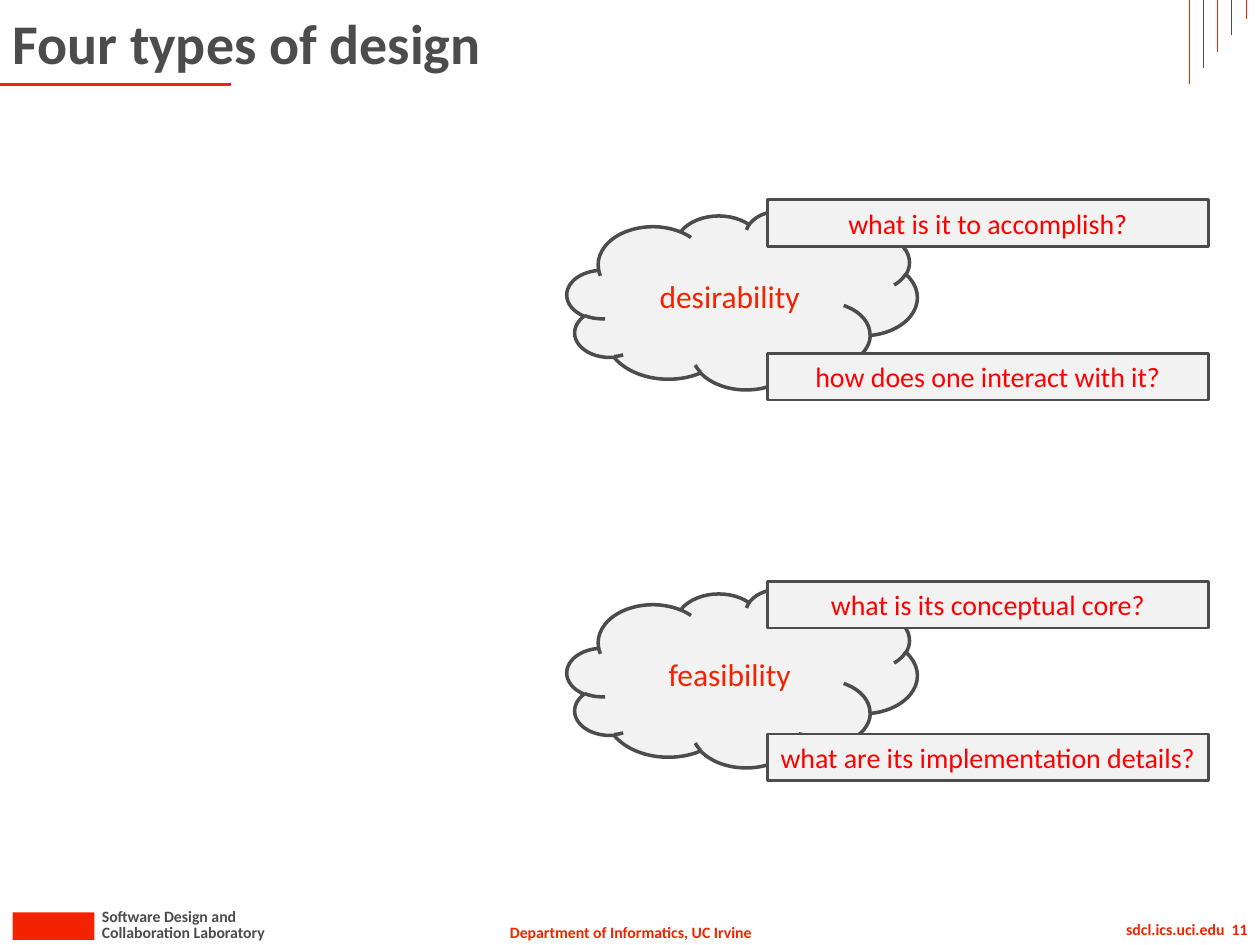
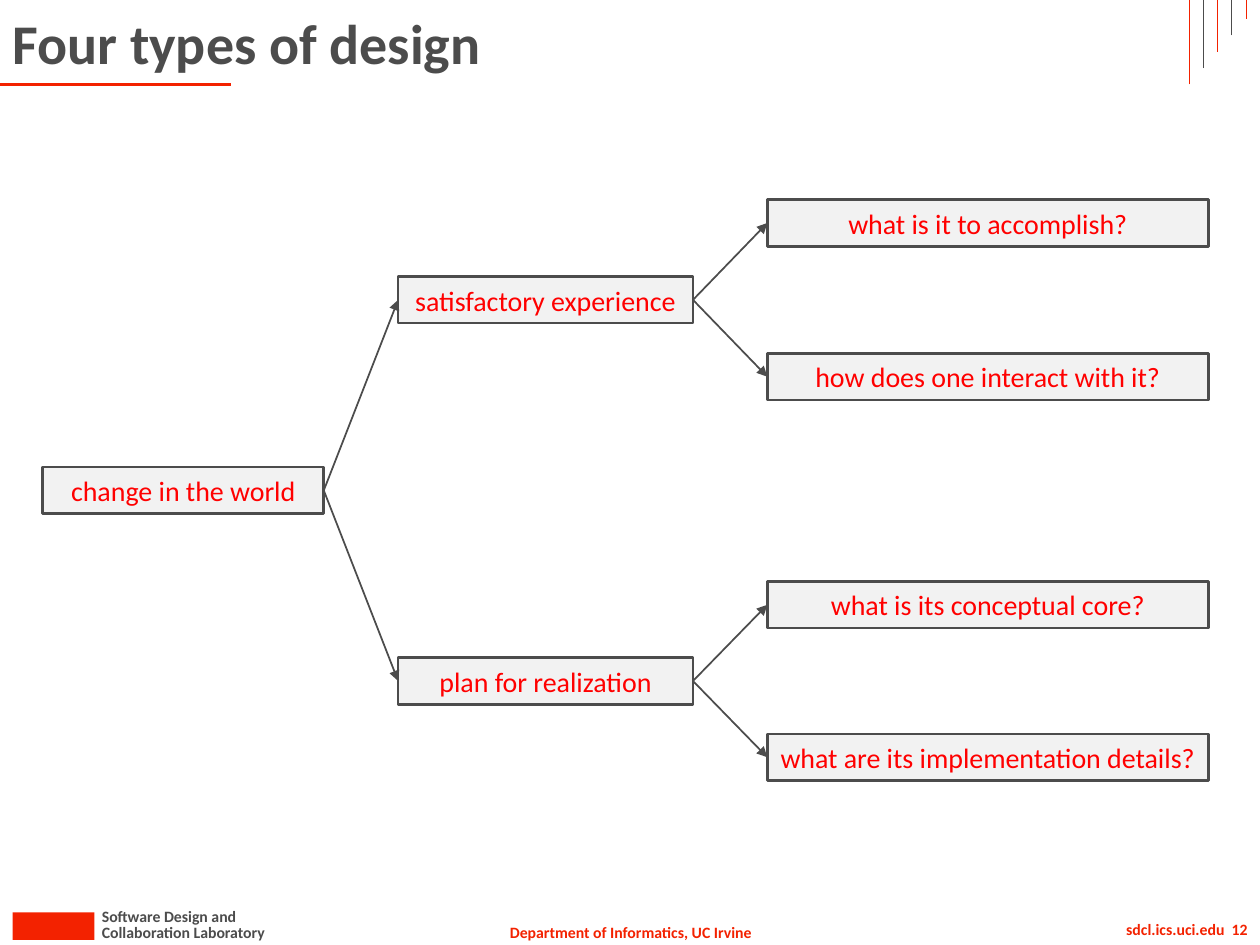
import pptx
import pptx.util
import pptx.dml.color
import pptx.enum.shapes
import pptx.enum.text
import pptx.oxml
import pptx.oxml.ns

Inches = pptx.util.Inches
Pt = pptx.util.Pt
Align = pptx.enum.text.PP_ALIGN
Anchor = pptx.enum.text.MSO_ANCHOR
Fit = pptx.enum.text.MSO_AUTO_SIZE
Preset = pptx.enum.shapes.MSO_SHAPE

COLOURS = {"accent": "F32200", "ink": "4C4C4C", "panel": "F2F2F2", "answer": "FF0000"}
FONT = "Calibri"
TITLE = "Four types of design"
SITE = "sdcl.ics.uci.edu  {}"
FIRST_NUMBER = 11

FOOTERS = [
    ("Department of Informatics, UC Irvine", (3.93, 7.27, 2.15, 0.25), "accent", Align.CENTER, False),
    ("Collaboration Laboratory", (0.71, 7.27, 1.53, 0.25), "ink", Align.LEFT, False),
    ("Software Design and", (0.71, 7.15, 1.29, 0.25), "ink", Align.LEFT, False),
    (SITE, (7.84, 7.25, 2.16, 0.25), "accent", Align.RIGHT, True),
]
FOOTER_BLOCK = (0.1, 7.24, 0.65, 0.22)

ROOT = "change in the world"
BRANCHES = [
    {"cloud": "desirability", "goal": "satisfactory experience", "cloud_top": 1.67,
     "questions": [("what is it to accomplish?", 1.77), ("how does one interact with it?", 2.99)]},
    {"cloud": "feasibility", "goal": "plan for realization", "cloud_top": 4.67,
     "questions": [("what is its conceptual core?", 4.8), ("what are its implementation details?", 6.01)]},
]
COLUMNS = {"root": (0.34, 2.23), "goal": (3.16, 2.34), "question": (6.09, 3.5)}
BOX_HEIGHT = 0.37
CLOUD_LEFT, CLOUD_SIZE = 4.5, (2.78, 1.42)
TICKS, TICK_LEFT, TICK_RIGHT, TICK_LENGTH, TICK_STEP = 5, 9.44, 9.89, 0.67, 0.13


def colour(name):
    return pptx.dml.color.RGBColor.from_string(COLOURS[name])


def write(shape, words, size, ink, align, bold=False, **frame_format):
    for attribute, value in frame_format.items():
        setattr(shape.text_frame, attribute, value)
    paragraph = shape.text_frame.paragraphs[0]
    paragraph.alignment = align
    run = paragraph.add_run()
    run.text = words
    for attribute, value in {"name": FONT, "size": Pt(size), "bold": bold}.items():
        setattr(run.font, attribute, value)
    run.font.color.rgb = colour(ink)


def label(slide, words, place, size, ink, align, wrap, **frame_format):
    text = slide.shapes.add_textbox(*map(Inches, place))
    write(text, words, size, ink, align, True, word_wrap=wrap, **frame_format)


def line(slide, start, end, ink, width, arrow=False):
    link = slide.shapes.add_connector(
        pptx.enum.shapes.MSO_CONNECTOR.STRAIGHT, *map(Inches, start + end))
    link.line.color.rgb = colour(ink)
    link.line.width = Pt(width)
    properties = link._element.spPr
    if arrow:
        properties.find(pptx.oxml.ns.qn("a:ln")).append(pptx.oxml.parse_xml(
            f'<a:tailEnd {pptx.oxml.ns.nsdecls("a")} type="triangle"/>'))
    properties.append(
        pptx.oxml.parse_xml(f'<a:effectLst {pptx.oxml.ns.nsdecls("a")}/>'))


def filled(slide, preset, place, fill):
    shape = slide.shapes.add_shape(preset, *map(Inches, place))
    shape.shadow.inherit = False
    shape.fill.solid()
    shape.fill.fore_color.rgb = colour(fill)
    return shape


def panel(slide, preset, place, words, size, ink, border, fit):
    shape = filled(slide, preset, place, "panel")
    shape.line.color.rgb = colour("ink")
    shape.line.width = Pt(border)
    write(shape, words, size, ink, Align.CENTER,
          word_wrap=True, vertical_anchor=Anchor.MIDDLE, auto_size=fit)


def box(slide, column, words, middle):
    left, width = COLUMNS[column]
    panel(slide, Preset.RECTANGLE, (left, middle - BOX_HEIGHT / 2, width, BOX_HEIGHT),
          words, 16, "answer", 1.5, Fit.SHAPE_TO_FIT_TEXT)


def arrow(slide, source, start, target, end):
    line(slide, (sum(COLUMNS[source]), start), (COLUMNS[target][0], end), "ink", 1, True)


def mean(values):
    return sum(values) / len(values)


def goal_middle(branch):
    return mean([middle for _, middle in branch["questions"]])


def add_base(deck, number):
    slide = deck.slides.add_slide(deck.slide_layouts[6])
    filled(slide, Preset.RECTANGLE, FOOTER_BLOCK, "accent").line.fill.background()
    for words, place, ink, align, wrap in FOOTERS:
        label(slide, words.format(number), place, 9, ink, align, wrap,
              auto_size=Fit.SHAPE_TO_FIT_TEXT)
    line(slide, (0, 0.67), (1.83, 0.67), "accent", 1.5)
    for tick in range(TICKS):
        x = TICK_LEFT + tick * (TICK_RIGHT - TICK_LEFT) / (TICKS - 1)
        line(slide, (x, TICK_LENGTH - tick * TICK_STEP), (x, 0),
             "ink" if tick % 2 else "accent", 0.5)
    label(slide, TITLE, (0, 0, 9, 0.67), 32, "ink", Align.LEFT, True,
          vertical_anchor=Anchor.MIDDLE, auto_size=Fit.NONE)
    return slide


def add_questions(slide):
    for branch in BRANCHES:
        for question, middle in branch["questions"]:
            box(slide, "question", question, middle)


def add_clouds(slide):
    for branch in BRANCHES:
        panel(slide, Preset.CLOUD, (CLOUD_LEFT, branch["cloud_top"], *CLOUD_SIZE),
              branch["cloud"], 18, "accent", 2, Fit.NONE)


def add_tree(slide):
    root_middle = mean([goal_middle(branch) for branch in BRANCHES])
    box(slide, "root", ROOT, root_middle)
    for branch in BRANCHES:
        middle = goal_middle(branch)
        box(slide, "goal", branch["goal"], middle)
        arrow(slide, "root", root_middle, "goal", middle)
        for _, question_middle in branch["questions"]:
            arrow(slide, "goal", middle, "question", question_middle)


def main():
    deck = pptx.Presentation()
    deck.slide_width, deck.slide_height = Inches(10), Inches(7.5)
    for number, add_left_side in enumerate((add_clouds, add_tree), FIRST_NUMBER):
        slide = add_base(deck, number)
        add_left_side(slide)
        add_questions(slide)
    deck.save("out.pptx")


if __name__ == "__main__":
    main()
